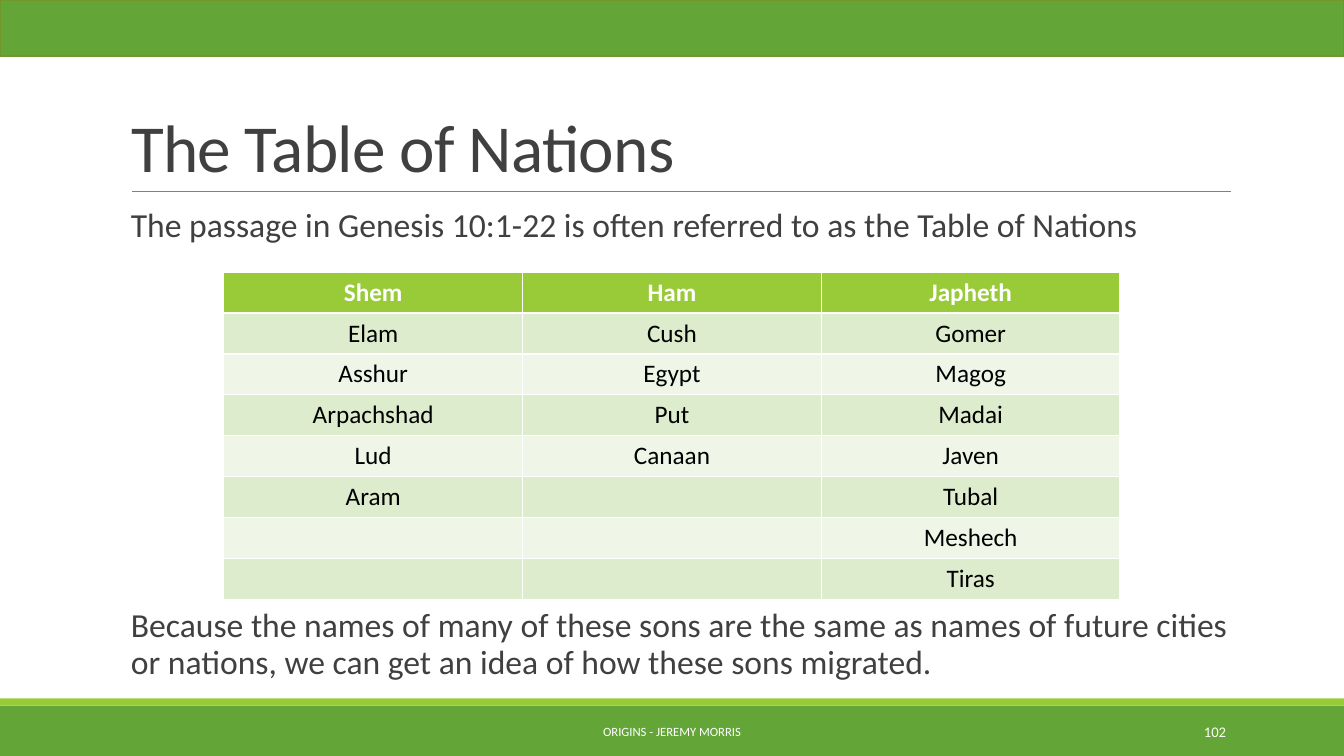
from lxml import etree
from pptx import Presentation
from pptx.dml.color import RGBColor
from pptx.enum.shapes import MSO_CONNECTOR, MSO_SHAPE
from pptx.enum.text import MSO_ANCHOR, MSO_AUTO_SIZE, PP_ALIGN
from pptx.oxml.ns import qn
from pptx.util import Inches, Pt

RECT = MSO_SHAPE.RECTANGLE
LINE = MSO_CONNECTOR.STRAIGHT
LEFT, MID, RIGHT = PP_ALIGN.LEFT, PP_ALIGN.CENTER, PP_ALIGN.RIGHT
TOP, CENTER, BOTTOM = MSO_ANCHOR.TOP, MSO_ANCHOR.MIDDLE, MSO_ANCHOR.BOTTOM
NO_FIT = MSO_AUTO_SIZE.NONE

COLORS = {
    "green": "63A537", "lime": "99CB38", "edge": "719629", "rule": "808080",
    "ink": "404040", "white": "FFFFFF", "black": "000000",
    "band": "DEECCE", "pale": "EFF6E8",
}
SONS = [
    ("Shem", "Ham", "Japheth"),
    ("Elam", "Cush", "Gomer"),
    ("Asshur", "Egypt", "Magog"),
    ("Arpachshad", "Put", "Madai"),
    ("Lud", "Canaan", "Javen"),
    ("Aram", "", "Tubal"),
    ("", "", "Meshech"),
    ("", "", "Tiras"),
]
INTRO = "The passage in Genesis 10:1-22 is often referred to as the Table of Nations"
CLOSE = ("Because the names of many of these sons are the same as names of future "
         "cities or nations, we can get an idea of how these sons migrated.")


def color(name):
    """Return the named colour."""
    return RGBColor.from_string(COLORS[name])


def apply(item, values):
    """Set each attribute in a dict on an item."""
    for key, value in values.items():
        setattr(item, key, value)


def style(para, size, ink, align=LEFT, bold=False):
    """Format the font and alignment of a paragraph."""
    para.alignment = align
    apply(para.font, {"name": "Calibri", "size": Pt(size), "bold": bold})
    para.font.color.rgb = color(ink)


def add_bar(slide, top, height, fill, edge=None):
    """Add a bar across the full width of the slide."""
    bar = slide.shapes.add_shape(RECT, 0, Inches(top), Inches(13.33), Inches(height))
    bar.shadow.inherit = False
    bar.fill.solid()
    bar.fill.fore_color.rgb = color(fill)
    if edge:
        bar.line.color.rgb = color(edge)
        bar.line.width = Pt(1.25)
    else:
        bar.line.fill.background()


def add_rule(slide):
    """Add the thin line below the title."""
    rule = slide.shapes.add_connector(
        LINE, Inches(1.31), Inches(1.9), Inches(12.21), Inches(1.9))
    rule.line.color.rgb = color("rule")
    rule.line.width = Pt(0.5)
    etree.SubElement(rule._element.spPr, qn("a:effectLst"))


def set_title(slide, text):
    """Place and format the title."""
    title = slide.shapes.title
    apply(title, {"left": Inches(1.2), "top": Inches(0.31),
                  "width": Inches(11), "height": Inches(1.59)})
    frame = title.text_frame
    frame.text = text
    apply(frame, {"word_wrap": True, "auto_size": NO_FIT, "vertical_anchor": BOTTOM})
    para = frame.paragraphs[0]
    style(para, 48, "ink")
    para.line_spacing = 0.85
    para.runs[0].font._element.set("spc", "-50")


def add_text(slide, box, text, size, ink, align=LEFT, anchor=CENTER):
    """Add a text box and return its frame."""
    frame = slide.shapes.add_textbox(*map(Inches, box)).text_frame
    frame.text = text
    apply(frame, {"word_wrap": True, "auto_size": NO_FIT, "vertical_anchor": anchor})
    style(frame.paragraphs[0], size, ink, align)
    return frame


def add_body(slide, top, height, text):
    """Add a body paragraph in line with the title."""
    frame = add_text(slide, (1.2, top, 11, height), text, 24, "ink", anchor=TOP)
    apply(frame, {"margin_left": Inches(0.1), "margin_right": 0})
    apply(frame.paragraphs[0], {"line_spacing": 0.9, "space_after": Pt(2)})


def add_sons(slide):
    """Add the table of sons with banded rows."""
    rows, cols = len(SONS), len(SONS[0])
    table = slide.shapes.add_table(
        rows, cols, Inches(2.22), Inches(2.7), Inches(8.89), Inches(3.24)).table
    for r, names in enumerate(SONS):
        head = r == 0
        fill = "lime" if head else "band" if r % 2 else "pale"
        for c, name in enumerate(names):
            cell = table.cell(r, c)
            cell.text = name
            cell.fill.solid()
            cell.fill.fore_color.rgb = color(fill)
            style(cell.text_frame.paragraphs[0], 18,
                  "white" if head else "black", MID, head)


def main():
    """Build and save the slide."""
    deck = Presentation()
    apply(deck, {"slide_width": Inches(13.33), "slide_height": Inches(7.5)})
    slide = deck.slides.add_slide(deck.slide_layouts[5])
    add_bar(slide, 7, 0.5, "green")
    add_bar(slide, 6.93, 0.07, "lime")
    add_rule(slide)
    add_bar(slide, 0, 0.56, "green", "edge")
    set_title(slide, "The Table of Nations")
    add_body(slide, 2.02, 0.74, INTRO)
    add_text(slide, (4.03, 7.06, 5.27, 0.4), "ORIGINS - JEREMY MORRIS", 9, "white", MID)
    add_text(slide, (10.83, 7.06, 1.43, 0.4), "102", 10.5, "white", RIGHT)
    add_sons(slide)
    add_body(slide, 5.99, 0.92, CLOSE)
    deck.save("out.pptx")


if __name__ == "__main__":
    main()
